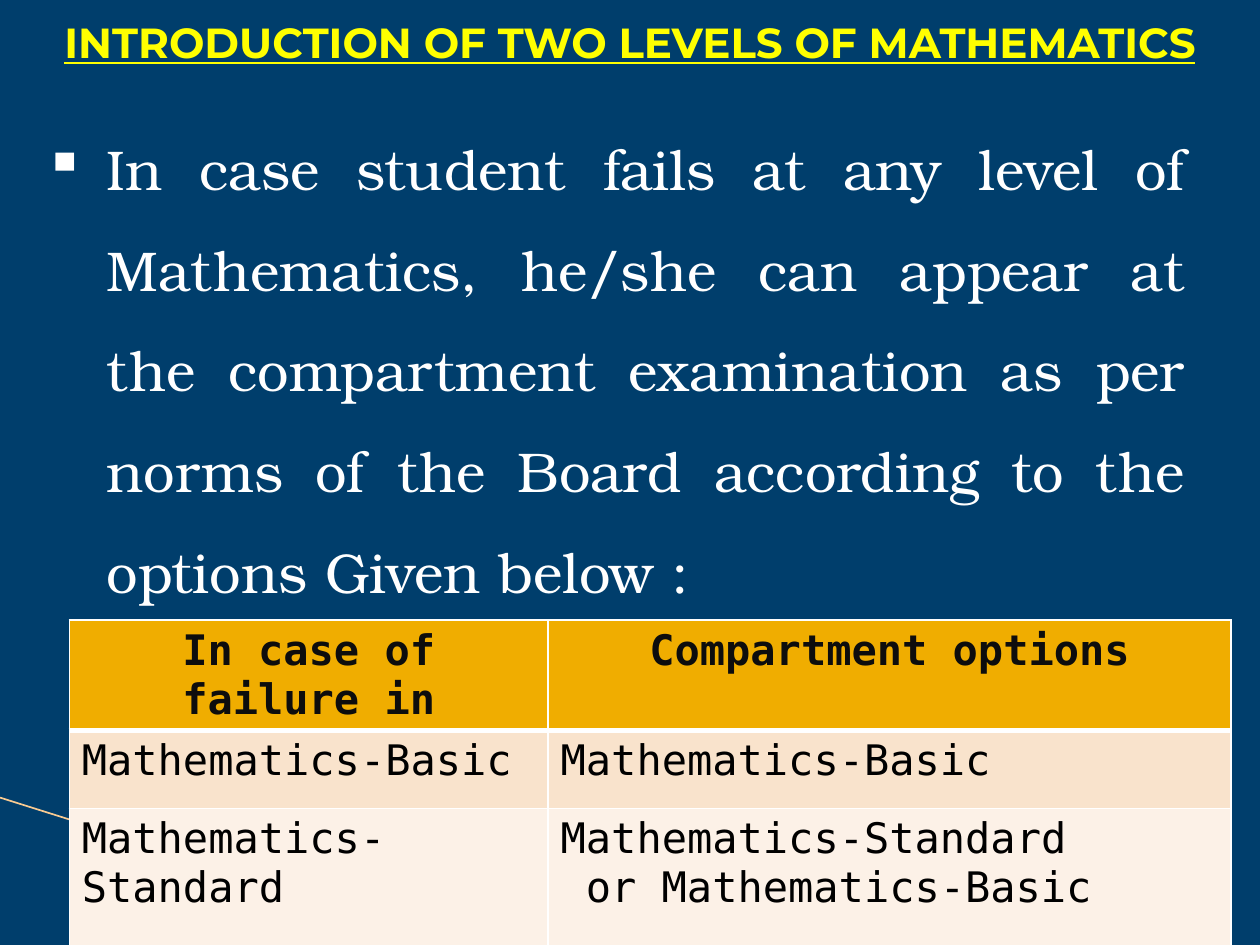
from dataclasses import dataclass

import pptx
import pptx.dml.color
import pptx.enum.shapes
import pptx.enum.text
import pptx.oxml
import pptx.oxml.ns
import pptx.util

Align = pptx.enum.text.PP_ALIGN
Anchor = pptx.enum.text.MSO_ANCHOR
NS = pptx.oxml.ns.nsdecls("a")


@dataclass(frozen=True)
class Theme:
    """Colours, fonts and type sizes."""
    navy: str = "003E6C"
    white: str = "FFFFFF"
    yellow: str = "FFFF00"
    amber: str = "F0AD00"
    sand: str = "F9E3CC"
    cream: str = "FCF1E7"
    gold: str = "F9CB92"
    ink: str = "0D0D0D"
    black: str = "000000"
    sans: str = "Montserrat"
    serif: str = "TeX Gyre Bonum"
    mono: str = "DejaVu Sans Mono"
    large: int = 32
    small: int = 24


@dataclass(frozen=True)
class Style:
    face: str
    size: int
    tint: str
    bold: bool = False
    under: bool = False


@dataclass(frozen=True)
class Box:
    """A place in percent of the slide's width and height."""
    left: float
    top: float
    width: float
    height: float


@dataclass(frozen=True)
class Row:
    height: float
    fill: str
    style: Style
    align: Align
    rule: float
    cells: tuple


T = Theme()
HEAD = Style(T.mono, T.small, T.ink, bold=True)
CELL = Style(T.mono, T.small, T.black)
COLS = (38, 54.2)
ROWS = (
    Row(8.27, T.amber, HEAD, Align.CENTER, 3,
        (("In case of failure in",), ("Compartment options",))),
    Row(8.27, T.sand, CELL, Align.LEFT, 1,
        (("Mathematics-Basic",), ("Mathematics-Basic",))),
    Row(14.67, T.cream, CELL, Align.LEFT, 1,
        (("Mathematics-Standard",),
         ("Mathematics-Standard", "or Mathematics-Basic"))),
)

deck = pptx.Presentation()
deck.slide_width = pptx.util.Inches(10)
deck.slide_height = pptx.util.Inches(7.5)
slide = deck.slides.add_slide(deck.slide_layouts[6])


def across(share: float) -> int:
    return round(deck.slide_width * share / 100)


def down(share: float) -> int:
    return round(deck.slide_height * share / 100)


def place(box: Box) -> tuple:
    return across(box.left), down(box.top), across(box.width), down(box.height)


def tint(code: str) -> pptx.dml.color.RGBColor:
    return pptx.dml.color.RGBColor.from_string(code)


def paint(item, code: str) -> None:
    item.fill.solid()
    item.fill.fore_color.rgb = tint(code)


def write(para, text: str, style: Style, align: Align) -> None:
    para.alignment = align
    run = para.add_run()
    run.text = text
    font = run.font
    font.name, font.size = style.face, pptx.util.Pt(style.size)
    font.bold, font.underline = style.bold, style.under
    font.color.rgb = tint(style.tint)


def indent(para, left: float, first: float = 0) -> None:
    props = para._p.get_or_add_pPr()
    props.set("marL", str(pptx.util.Inches(left)))
    props.set("indent", str(pptx.util.Inches(first)))


def panel(box: Box, anchor: Anchor):
    shape = slide.shapes.add_shape(
        pptx.enum.shapes.MSO_SHAPE.RECTANGLE, *place(box))
    shape.shadow.inherit = False
    paint(shape, T.navy)
    shape.line.fill.background()
    frame = shape.text_frame
    frame.word_wrap = True
    frame.vertical_anchor = anchor
    return frame


def border(cell, base: float) -> None:
    props = cell._tc.get_or_add_tcPr()
    widths = {"lnL": 1, "lnR": 1, "lnT": 1, "lnB": base}
    for spot, (side, width) in enumerate(widths.items()):
        props.insert(spot, pptx.oxml.parse_xml(
            f'<a:{side} {NS} w="{pptx.util.Pt(width)}"><a:solidFill>'
            f'<a:srgbClr val="{T.white}"/></a:solidFill></a:{side}>'))


def grid(left: float, top: float) -> None:
    box = Box(left, top, sum(COLS), sum(row.height for row in ROWS))
    table = slide.shapes.add_table(len(ROWS), len(COLS), *place(box)).table
    for col, width in zip(table.columns, COLS):
        col.width = across(width)
    for line, row in zip(table.rows, ROWS):
        line.height = down(row.height)
        for cell, texts in zip(line.cells, row.cells):
            paint(cell, row.fill)
            border(cell, row.rule)
            frame = cell.text_frame
            for rank, text in enumerate(texts):
                para = frame.add_paragraph() if rank else frame.paragraphs[0]
                if rank:
                    indent(para, 0.2)
                write(para, text, row.style, row.align)


# Background and accent line
paint(slide.background, T.navy)
line = slide.shapes.add_connector(
    pptx.enum.shapes.MSO_CONNECTOR.STRAIGHT,
    0, down(84.4), across(37.1), down(100))
line.line.color.rgb = tint(T.gold)
line.line.width = pptx.util.Pt(0.95)
line._element.spPr.append(pptx.oxml.parse_xml(f"<a:effectLst {NS}/>"))

# Body text; the right inset sets where the lines break
body = panel(Box(2.5, 10.4, 95, 53.87), Anchor.MIDDLE)
body.margin_right = pptx.util.Inches(0.34)
para = body.paragraphs[0]
para.line_spacing = 1.5
indent(para, 0.5, -0.5)
para._p.get_or_add_pPr().append(
    pptx.oxml.parse_xml(f'<a:buChar {NS} char="▪"/>'))
write(para,
      "In case student fails at any level of Mathematics, he/she can appear "
      "at the compartment examination as per norms of the Board according "
      "to the options Given below :",
      Style(T.serif, T.large, T.white), Align.JUSTIFY)

# Table of options
grid(5.5, 65.6)

# Title
title = panel(Box(0, 1.07, 100, 6.67), Anchor.TOP)
write(title.paragraphs[0], "INTRODUCTION OF TWO LEVELS OF MATHEMATICS",
      Style(T.sans, T.small, T.yellow, bold=True, under=True), Align.CENTER)

deck.save("out.pptx")
